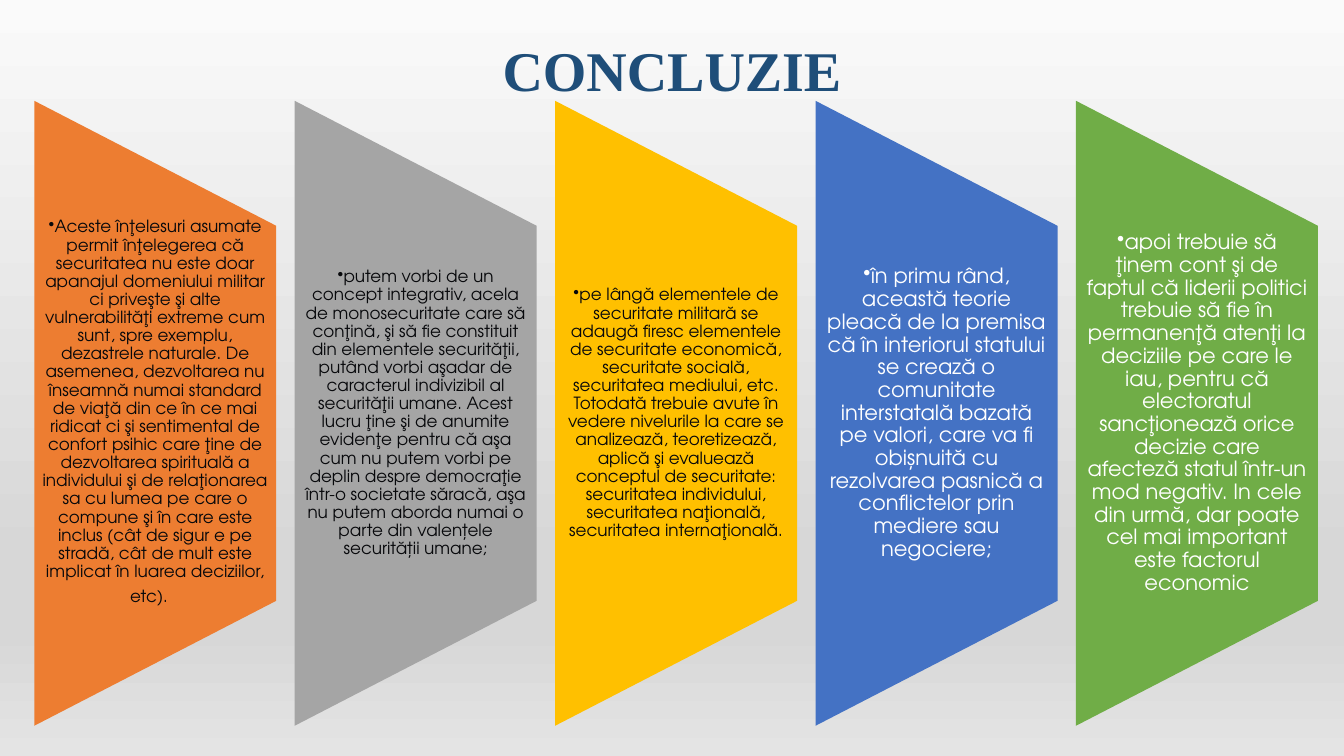
from copy import deepcopy
from dataclasses import dataclass

from lxml import etree
from pptx import Presentation
from pptx import util as u
from pptx.dml.color import RGBColor
from pptx.enum import shapes, text
from pptx.oxml.ns import qn


@dataclass(frozen=True)
class Theme:
    title_font: str = "Times New Roman"
    body_font: str = "TeX Gyre Adventor"
    title_size: int = 40
    large_size: int = 15
    small_size: int = 12
    trailing_size: int = 18
    title_color: str = "1F4E79"
    dark: str = "07080B"
    light: str = "FFFFFF"
    panels: tuple = ("ED7D31", "A5A5A5", "FFC000", "4472C4", "70AD47")
    backdrop: tuple = ((0, "FAFAFA"), (74, "D7D7D7"), (83, "D7D7D7"), (100, "E4E4E4"))


THEME = Theme()

PANEL_LEFT, PANEL_PITCH, PANEL_WIDTH = 0.34, 2.583, 2.4
PANEL_TOP, PANEL_HEIGHT = 1.0, 6.2
TEXT_TOP, TEXT_HEIGHT = 2.24, 3.72

CONCLUSIONS = (
    "Aceste înţelesuri asumate permit înţelegerea că securitatea nu este doar apanajul "
    "domeniului militar ci priveşte şi alte vulnerabilităţi extreme cum sunt, spre exemplu, "
    "dezastrele naturale. De asemenea, dezvoltarea nu înseamnă numai standard de viaţă din ce "
    "în ce mai ridicat ci şi sentimental de confort psihic care ţine de dezvoltarea spirituală "
    "a individului şi de relaţionarea sa cu lumea pe care o compune şi în care este inclus "
    "(cât de sigur e pe stradă, cât de mult este implicat în luarea deciziilor, etc). ",
    "putem vorbi de un concept integrativ, acela de monosecuritate care să conţină, şi să fie "
    "constituit din elementele securităţii, putând vorbi aşadar de caracterul indivizibil al "
    "securităţii umane. Acest lucru ţine şi de anumite evidenţe pentru că aşa cum nu putem "
    "vorbi pe deplin despre democraţie într-o societate săracă, aşa nu putem aborda numai o "
    "parte din valențele securității umane;",
    "pe lângă elementele de securitate militară se adaugă firesc elementele de securitate "
    "economică, securitate socială, securitatea mediului, etc. Totodată trebuie avute în vedere "
    "nivelurile la care se analizează, teoretizează, aplică şi evaluează conceptul de "
    "securitate: securitatea individului, securitatea naţională, securitatea internaţională.",
    "în primu rând, această teorie pleacă de la premisa că în interiorul statului se crează o "
    "comunitate interstatală bazată pe valori, care va fi obișnuită cu rezolvarea pasnică a "
    "conflictelor prin mediere sau negociere;",
    "apoi trebuie să ţinem cont şi de faptul că liderii politici trebuie să fie în permanenţă "
    "atenţi la deciziile pe care le iau, pentru că electoratul sancţionează orice decizie care "
    "afecteză statul într-un mod negativ. In cele din urmă, dar poate cel mai important este "
    "factorul economic",
)


def set_backdrop(slide):
    fill = slide.background.fill
    fill.gradient()
    fill.gradient_angle = 270
    stop_list = slide.element.xpath(".//p:bg//a:gsLst")[0]
    while len(stop_list) < len(THEME.backdrop):
        stop_list.append(deepcopy(stop_list[0]))
    for stop, (percent, color) in zip(fill.gradient_stops, THEME.backdrop):
        stop.position = percent / 100
        stop.color.rgb = RGBColor.from_string(color)


def add_run(paragraph, content, font, size, color, bold=False):
    run = paragraph.add_run()
    run.text = content
    run.font.name = font
    run.font.size = u.Pt(size)
    run.font.bold = bold
    run.font.color.rgb = RGBColor.from_string(color)


def center(paragraph):
    paragraph.alignment = text.PP_ALIGN.CENTER
    paragraph.line_spacing = 0.9


def add_bullet(paragraph):
    properties = paragraph._p.get_or_add_pPr()
    properties.set("marL", "0")
    properties.set("indent", "0")
    etree.SubElement(properties, qn("a:buChar")).set("char", "•")


def set_title(slide, content):
    title = slide.shapes.title
    title.left, title.top = u.Inches(1.33), u.Inches(0.3)
    title.width, title.height = u.Inches(10.67), u.Inches(0.78)
    frame = title.text_frame
    frame.auto_size = text.MSO_AUTO_SIZE.NONE
    frame.vertical_anchor = text.MSO_ANCHOR.BOTTOM
    paragraph = frame.paragraphs[0]
    center(paragraph)
    add_run(paragraph, content, THEME.title_font, THEME.title_size, THEME.title_color, bold=True)


def add_panel(slide, left, color):
    """Add a trapezoid turned so that its long side stands on the left."""
    offset = (PANEL_HEIGHT - PANEL_WIDTH) / 2
    panel = slide.shapes.add_shape(
        shapes.MSO_SHAPE.FLOWCHART_MANUAL_OPERATION,
        u.Inches(left - offset), u.Inches(PANEL_TOP + offset),
        u.Inches(PANEL_HEIGHT), u.Inches(PANEL_WIDTH))
    panel.rotation = 270
    panel.shadow.inherit = False
    panel.fill.solid()
    panel.fill.fore_color.rgb = RGBColor.from_string(color)
    panel.line.fill.background()


def add_panel_text(slide, left, content, size, color, inset):
    box = slide.shapes.add_textbox(
        u.Inches(left), u.Inches(TEXT_TOP), u.Inches(PANEL_WIDTH), u.Inches(TEXT_HEIGHT))
    frame = box.text_frame
    frame.word_wrap = True
    frame.vertical_anchor = text.MSO_ANCHOR.MIDDLE
    frame.margin_left = frame.margin_right = u.Inches(inset)
    frame.margin_top = frame.margin_bottom = 0
    paragraph = frame.paragraphs[0]
    center(paragraph)
    add_bullet(paragraph)
    add_run(paragraph, content, THEME.body_font, size, color)
    return paragraph


def main():
    presentation = Presentation()
    presentation.slide_width, presentation.slide_height = u.Inches(13.33), u.Inches(7.5)
    slide = presentation.slides.add_slide(presentation.slide_layouts[5])
    set_backdrop(slide)
    set_title(slide, "CONCLUZIE")

    small = (THEME.small_size, THEME.dark, 0.08)
    large = (THEME.large_size, THEME.light, 0.1)
    styles = (small, small, small, large, large)
    paragraphs = []
    for index, (content, color, style) in enumerate(zip(CONCLUSIONS, THEME.panels, styles)):
        left = PANEL_LEFT + index * PANEL_PITCH
        add_panel(slide, left, color)
        paragraphs.append(add_panel_text(slide, left, content, *style))
    add_run(paragraphs[0], "\t", THEME.body_font, THEME.trailing_size, THEME.dark)

    presentation.save("out.pptx")


if __name__ == "__main__":
    main()
